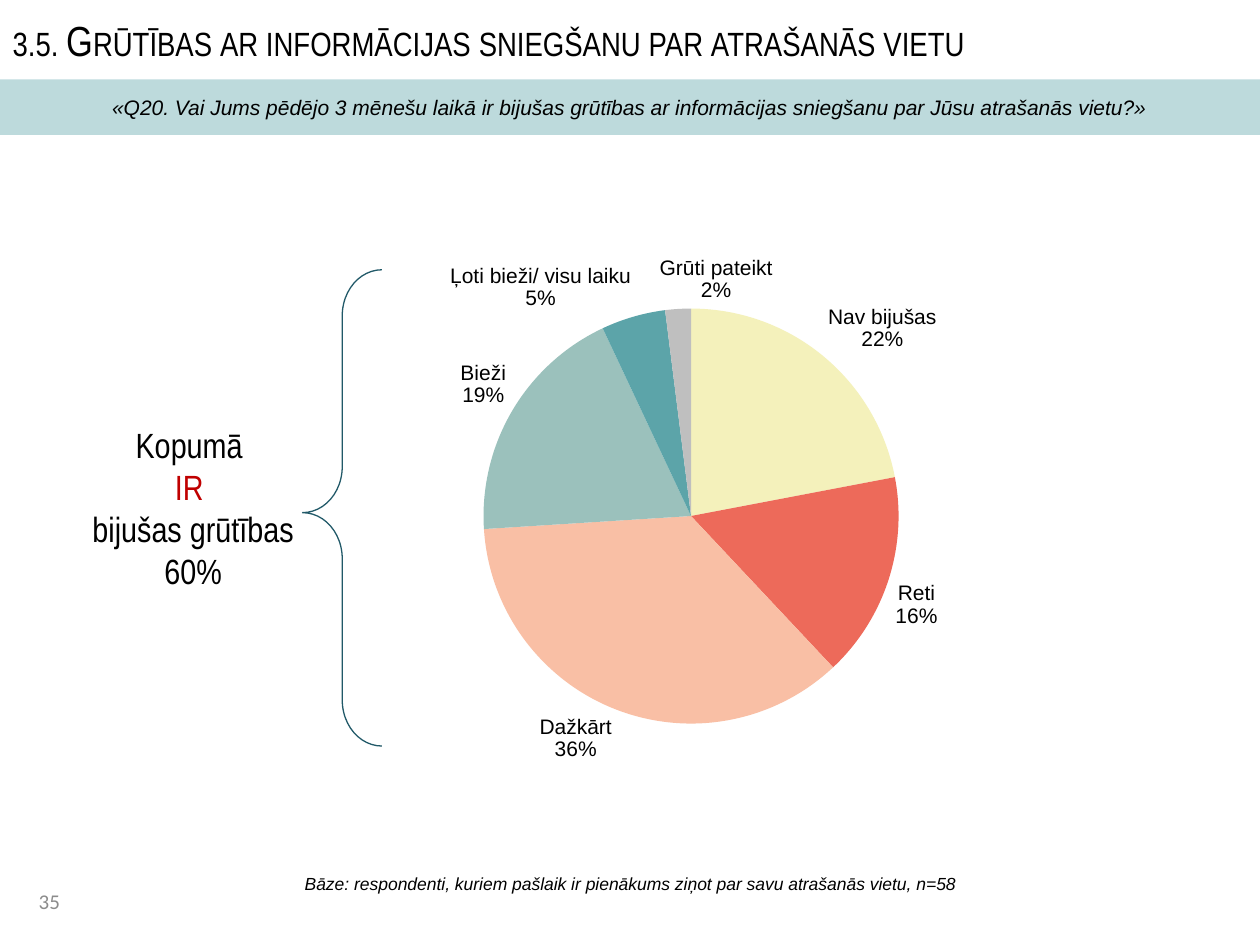
from copy import deepcopy

from lxml import etree
from pptx import Presentation
from pptx.chart.data import CategoryChartData
from pptx.dml.color import RGBColor
from pptx.enum import chart as ch, shapes, text
from pptx.oxml import parse_xml
from pptx.oxml.ns import nsdecls, qn
from pptx.util import Cm, Pt

BLACK = RGBColor(0, 0, 0)
GREY = RGBColor(0x8C, 0x8C, 0x8C)
RED = RGBColor(0xC0, 0, 0)
TEAL = RGBColor(0x5C, 0xA4, 0xA9)
BRACE_BLUE = RGBColor(0x21, 0x59, 0x68)

ANSWERS = [
    ("Nav bijušas", 22, RGBColor(0xF4, 0xF1, 0xBB)),
    ("Reti", 16, RGBColor(0xED, 0x6A, 0x5A)),
    ("Dažkārt", 36, RGBColor(0xF9, 0xBF, 0xA5)),
    ("Bieži", 19, RGBColor(0x9B, 0xC1, 0xBC)),
    ("Ļoti bieži/ visu laiku", 5, TEAL),
    ("Grūti pateikt", 2, RGBColor(0xBF, 0xBF, 0xBF)),
]


def style(font, name, size, color=BLACK, italic=None):
    font.name, font.size, font.italic = name, Pt(size), italic
    font.color.rgb = color


def write(shape, lines, name, size, color=BLACK, italic=None,
          align=text.PP_ALIGN.CENTER, anchor=text.MSO_ANCHOR.MIDDLE):
    """Fill a shape with one styled paragraph per line."""
    frame = shape.text_frame
    frame.text = "\n".join(lines)
    frame.word_wrap = True
    frame.auto_size = text.MSO_AUTO_SIZE.NONE
    frame.vertical_anchor = anchor
    for paragraph in frame.paragraphs:
        paragraph.alignment = align
        style(paragraph.font, name, size, color, italic)
    return frame


prs = Presentation()
prs.slide_width, prs.slide_height = Cm(25.4), Cm(19.05)
slide = prs.slides.add_slide(prs.slide_layouts[5])

# Heading, question and base
title = slide.shapes.title
title.left, title.top, title.width, title.height = Cm(0), Cm(0), Cm(25.4), Cm(1.6)
heading = write(title, ["3.5. Grūtības ar informācijas sniegšanu par atrašanās vietu"],
                "Arial Narrow", 24, align=text.PP_ALIGN.LEFT)
heading.paragraphs[0].runs[0].font._element.set("cap", "small")

page = slide.shapes.add_textbox(Cm(0.53), Cm(17.65), Cm(2.7), Cm(1.02))
write(page, ["35"], "Calibri", 12, GREY, align=text.PP_ALIGN.LEFT)

base = slide.shapes.add_textbox(Cm(0), Cm(17.22), Cm(25.4), Cm(1.2))
write(base, ["Bāze: respondenti, kuriem pašlaik ir pienākums ziņot par savu "
             "atrašanās vietu, n=58"], "Arial", 10, italic=True)

question = slide.shapes.add_shape(shapes.MSO_SHAPE.RECTANGLE,
                                  Cm(0), Cm(1.6), Cm(25.4), Cm(1.12))
question.shadow.inherit = False
question.fill.solid()
question.fill.fore_color.rgb = TEAL
tint = question._element.spPr.find(qn("a:solidFill"))[0]
etree.SubElement(tint, qn("a:alpha"), val="40000")
question.line.fill.background()
write(question, ["«Q20. Vai Jums pēdējo 3 mēnešu laikā ir bijušas grūtības ar "
                 "informācijas sniegšanu par Jūsu atrašanās vietu?»"],
      "Arial", 12, italic=True)

# Pie of answers
data = CategoryChartData()
data.categories = [answer for answer, _, _ in ANSWERS]
data.add_series("Series 1", [share for _, share, _ in ANSWERS])
pie = slide.shapes.add_chart(ch.XL_CHART_TYPE.PIE, Cm(3.91), Cm(3.91),
                             Cm(19.46), Cm(12.14), data).chart
pie.has_legend = False
pie.has_title = False
style(pie.font, "Arial", 10)
pie.plots[0].vary_by_categories = True
answers = pie.plots[0].series[0]
for index, (_, _, color) in enumerate(ANSWERS):
    slice_fill = answers.points[index].format.fill
    slice_fill.solid()
    slice_fill.fore_color.rgb = color

labels = answers.data_labels
labels.number_format, labels.number_format_is_linked = "0%", False
style(labels.font, "Arial", 12)
labels.position = ch.XL_LABEL_POSITION.OUTSIDE_END
labels.show_value = False
labels.show_category_name = labels.show_percentage = True
label_xml = labels._element
separator = etree.Element(qn("c:separator"))
separator.text = "\n"
label_xml.find(qn("c:showBubbleSize")).addnext(separator)


def manual_layout(settings):
    """Return a c:layout element holding the given settings in order."""
    items = "".join(f'<c:{tag} val="{value}"/>' for tag, value in settings.items())
    return parse_xml(f'<c:layout {nsdecls("c")}><c:manualLayout>{items}'
                     '</c:manualLayout></c:layout>')


# The last label is moved right, clear of its neighbour
moved = etree.Element(qn("c:dLbl"))
etree.SubElement(moved, qn("c:idx"), val=str(len(ANSWERS) - 1))
moved.append(manual_layout({"x": 0.04, "y": 0}))
for setting in label_xml:
    if setting.tag != qn("c:showLeaderLines"):
        moved.append(deepcopy(setting))
label_xml.insert(0, moved)

plot_area = pie._chartSpace.find(qn("c:chart")).find(qn("c:plotArea"))
for old in plot_area.findall(qn("c:layout")):
    plot_area.remove(old)
plot_area.insert(0, manual_layout({
    "layoutTarget": "inner", "xMode": "edge", "yMode": "edge",
    "x": 0.3, "y": 0.15, "w": 0.43, "h": 0.77}))

# Brace and total
brace = slide.shapes.add_shape(shapes.MSO_SHAPE.LEFT_BRACE,
                               Cm(6.1), Cm(5.44), Cm(1.6), Cm(9.6))
brace.adjustments[0], brace.adjustments[1] = 0.58, 0.51
brace.shadow.inherit = False
brace.fill.background()
brace.line.color.rgb = BRACE_BLUE
brace.line.width = Pt(0.75)

total = slide.shapes.add_textbox(Cm(1.42), Cm(8.41), Cm(4.95), Cm(3.68))
summary = write(total, ["Kopumā ", "IR ", "bijušas grūtības", "60%"],
                "Arial Narrow", 20, anchor=text.MSO_ANCHOR.TOP)
summary.paragraphs[1].font.color.rgb = RED

prs.save("out.pptx")
